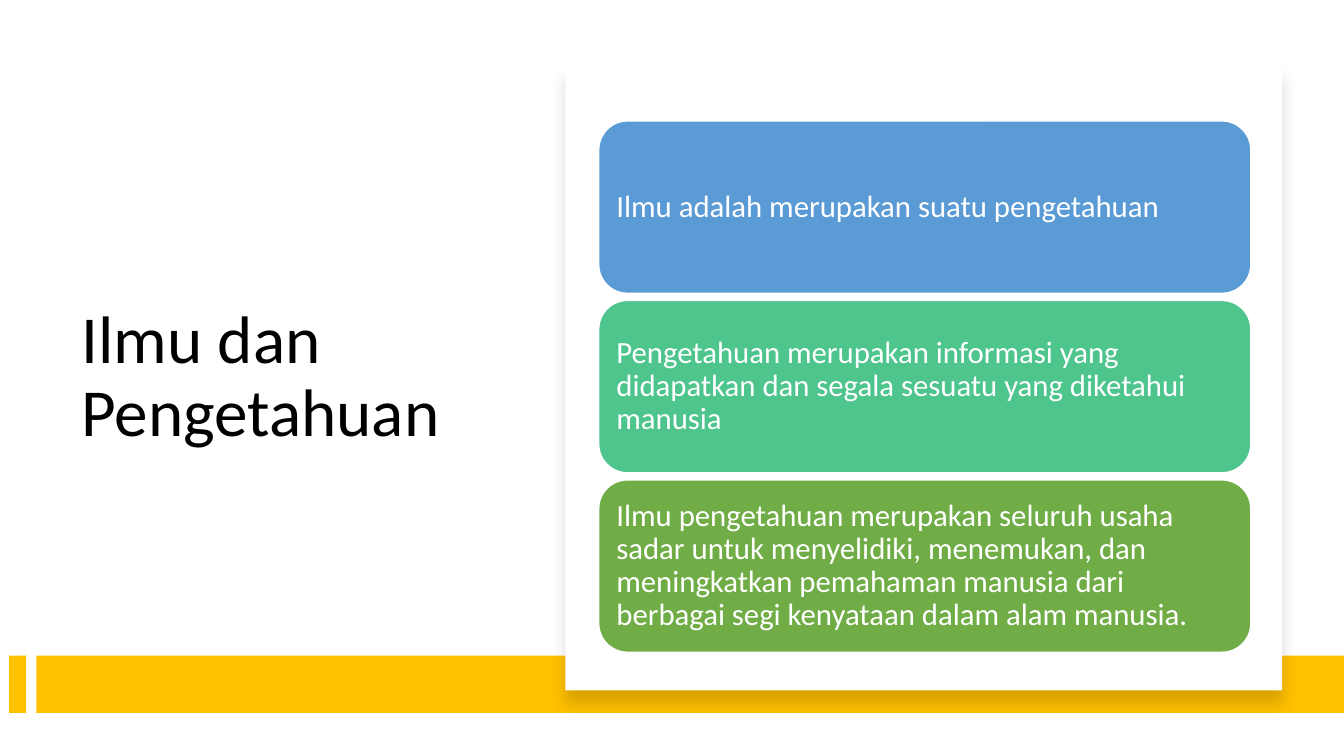
"""Build the slide that defines knowledge and science."""
from lxml import etree
from pptx import Presentation
from pptx.dml.color import RGBColor
from pptx.enum import shapes, text
from pptx.oxml.ns import qn
from pptx.util import Pt

TITLE = "Ilmu dan Pengetahuan"
CARDS = [
    ("Ilmu adalah merupakan suatu pengetahuan", "blue"),
    ("Pengetahuan merupakan informasi yang didapatkan dan segala sesuatu "
     "yang diketahui manusia", "teal"),
    ("Ilmu pengetahuan merupakan seluruh usaha sadar untuk menyelidiki, "
     "menemukan, dan meningkatkan pemahaman manusia dari berbagai segi "
     "kenyataan dalam alam manusia.", "green"),
]
THEME = {
    "font": "Calibri", "title": 48, "body": 22,
    "black": "000000", "white": "FFFFFF", "gold": "FFC000",
    "blue": "5B9BD5", "teal": "4DC58D", "green": "70AD47",
}
WIDE, HIGH = 960, 540
BAND_TOP, BAND_HIGH = 468.3, 41
BANDS = [(6.5, 12.2), (25.9, WIDE - 25.9)]
PANEL = (403.9, 46.1, 511.9, 447.1)
CARD_LEFT, CARD_TOP, CARD_WIDE, CARD_HIGH = 427.7, 86.4, 465.8, 123.1
STEP = 128.2

deck = Presentation()
deck.slide_width, deck.slide_height = Pt(WIDE), Pt(HIGH)
slide = deck.slides.add_slide(deck.slide_layouts[6])


def color(name):
    return RGBColor.from_string(THEME[name])


def write(shape, words, size, ink, side, edge):
    frame = shape.text_frame
    frame.word_wrap = True
    frame.vertical_anchor = text.MSO_ANCHOR.MIDDLE
    frame.margin_left = frame.margin_right = Pt(side)
    frame.margin_top = frame.margin_bottom = Pt(edge)
    para = frame.paragraphs[0]
    para.alignment = text.PP_ALIGN.LEFT
    para.line_spacing = 0.9
    run = para.add_run()
    run.text = words
    run.font.name = THEME["font"]
    run.font.size = Pt(THEME[size])
    run.font.color.rgb = color(ink)


def block(box, fill, line=None, kind=shapes.MSO_SHAPE.RECTANGLE):
    shape = slide.shapes.add_shape(kind, *map(Pt, box))
    shape.shadow.inherit = False
    shape.fill.solid()
    shape.fill.fore_color.rgb = color(fill)
    if line:
        shape.line.color.rgb = color(line)
        shape.line.width = Pt(1)
    else:
        shape.line.fill.background()
    return shape


def shade(shape, blur, drop, alpha):
    effects = shape.element.spPr.find(qn("a:effectLst"))
    outer = etree.SubElement(
        effects, qn("a:outerShdw"), blurRad=str(Pt(blur)), dist=str(Pt(drop)),
        dir="5400000", algn="t", rotWithShape="0")
    ink = etree.SubElement(outer, qn("a:srgbClr"), val=THEME["black"])
    etree.SubElement(ink, qn("a:alpha"), val=str(alpha * 1000))


title = slide.shapes.add_textbox(Pt(51.1), Pt(86.4), Pt(298.8), Pt(367.2))
write(title, TITLE, size="title", ink="black", side=7.2, edge=3.6)

for left, width in BANDS:
    block((left, BAND_TOP, width, BAND_HIGH), "gold")

shade(block(PANEL, "white"), blur=11, drop=10, alpha=15)

for row, (words, fill) in enumerate(CARDS):
    box = (CARD_LEFT, CARD_TOP + row * STEP, CARD_WIDE, CARD_HIGH)
    card = block(box, fill, "white", shapes.MSO_SHAPE.ROUNDED_RECTANGLE)
    write(card, words, size="body", ink="white", side=6.6, edge=6.6)

deck.save("out.pptx")
